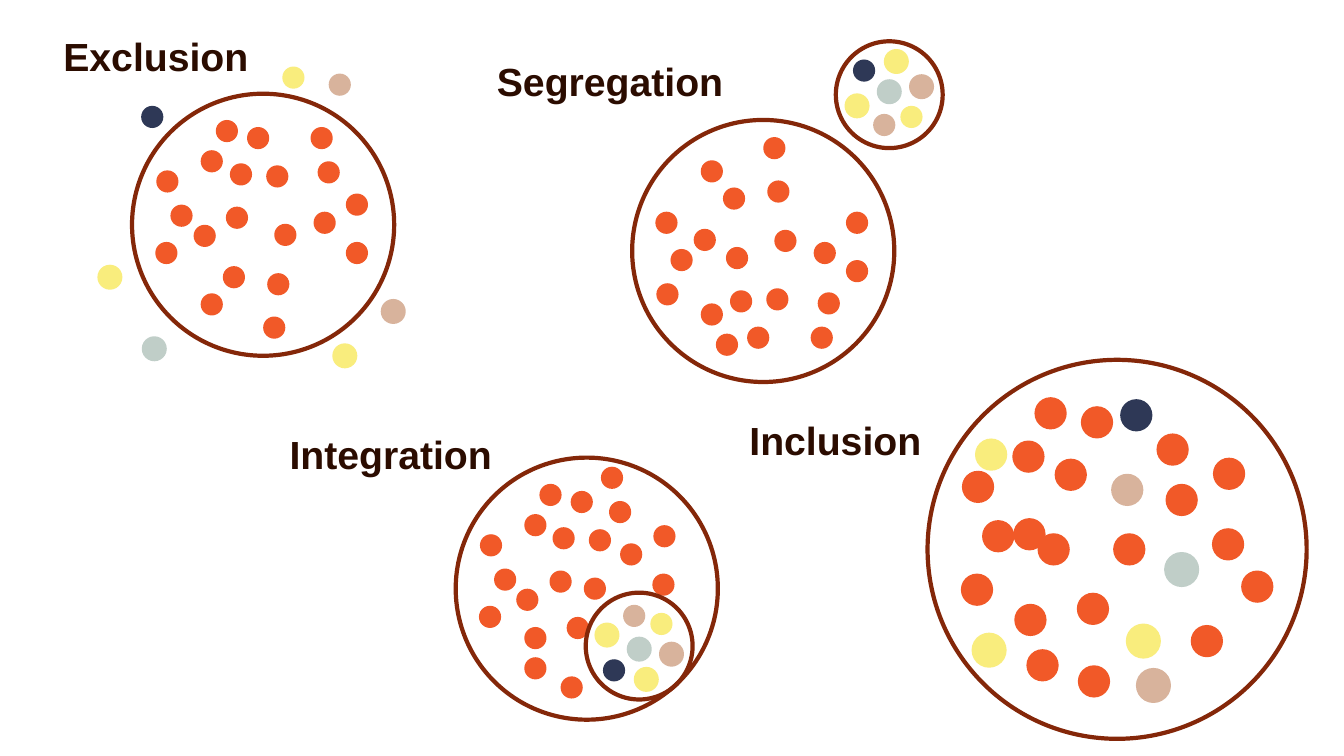
from pptx import Presentation
from pptx import util as u
from pptx.dml.color import RGBColor
from pptx.enum import shapes, text

INCH = 2.54  # coordinates below are in inches; lengths are given with Cm
COLOURS = {"ring": "842709", "majority": "F15928", "heading": "2B0C00",
           "tan": "D8B39C", "yellow": "F9ED7D", "navy": "2E3856", "mint": "C0CEC8"}
# Colour and outline width of the seven minority dots, in drawing order
MINORITY = [("tan", 0), ("yellow", 2), ("yellow", 2), ("navy", 0),
            ("mint", 2), ("tan", 2), ("yellow", 0)]
HEADING_FORMAT = {"name": "Arial", "size": u.Pt(28), "bold": True}
DOT, BIG_DOT, RING, SMALL_RING, BIG_RING = 0.22, 0.32, 2.6, 1.06, 3.76

deck = Presentation()
deck.slide_width, deck.slide_height = u.Cm(13.33 * INCH), u.Cm(7.5 * INCH)
slide = deck.slides.add_slide(deck.slide_layouts[6])


def add_circle(group, place, size, fill=None, outline=None, width=0):
    box = [u.Cm(value * INCH) for value in (*place, size, size)]
    circle = group.shapes.add_shape(shapes.MSO_SHAPE.OVAL, *box)
    circle.shadow.inherit = False
    for part, colour in ((circle.fill, fill), (circle.line.fill, outline)):
        if colour:
            part.solid()
            part.fore_color.rgb = RGBColor.from_string(COLOURS[colour])
        else:
            part.background()
    if outline:
        circle.line.width = u.Pt(width)


def mirror(places, shift, total):
    """Flip places top to bottom and move them sideways."""
    return [(x + shift, total - y) for x, y in places]


# Dot positions: segregation mirrors exclusion, and the two small rings mirror each other
exclusion_majority = [
    (3.43, 1.92), (2.64, 1.64), (3.08, 1.26), (2.61, 3.14), (2.65, 2.71),
    (2.21, 2.64), (1.99, 2.91), (2.24, 2.05), (1.92, 2.23), (1.69, 2.03),
    (1.54, 2.4), (1.55, 1.69), (2.28, 1.62), (2.45, 1.26), (2.14, 1.19),
    (1.99, 1.49), (2.72, 2.22), (3.15, 1.6), (3.11, 2.1), (3.43, 2.4)]
exclusion_minority = [
    (3.26, 0.73), (3.31, 3.42), (0.98, 2.64), (1.4, 1.05),
    (1.42, 3.35), (3.79, 2.98), (2.8, 0.66)]
integration_majority = [
    (6.48, 5.21), (5.84, 5.25), (5.96, 4.63), (5.56, 6.71), (5.62, 6.12),
    (5.2, 6.22), (5.2, 6.52), (5.45, 5.66), (5.12, 5.84), (4.9, 5.64),
    (4.75, 6.01), (4.76, 5.3), (5.48, 5.23), (5.66, 4.87), (5.35, 4.8),
    (5.2, 5.1), (5.79, 5.73), (6.04, 4.97), (6.15, 5.39), (6.47, 5.69)]
integration_minority = [
    (6.18, 6), (6.3, 6.63), (5.91, 6.19), (5.98, 6.54),
    (6.23, 6.33), (6.55, 6.38), (6.45, 6.08)]
segregation_majority = mirror(exclusion_majority, 4.96, 4.5)
segregation_minority = mirror(integration_minority, 2.48, 7.13)
inclusion_majority = [
    (12.03, 4.54), (12.31, 5.66), (11.81, 6.2), (10.69, 6.6), (10.68, 5.88),
    (10.06, 5.99), (10.18, 6.44), (10.29, 5.29), (10.05, 5.14), (9.74, 5.16),
    (9.53, 5.69), (9.54, 4.67), (10.46, 4.55), (10.72, 4.03), (10.26, 3.94),
    (10.04, 4.37), (11.04, 5.29), (11.47, 4.3), (11.56, 4.8), (12.02, 5.24)]
inclusion_minority = [
    (11.02, 4.7), (11.18, 6.2), (9.65, 6.29), (11.11, 3.96),
    (11.56, 5.49), (11.28, 6.64), (9.67, 4.35)]

# Heading, its place and alignment, ring, dot size, dots, small ring
LEFT, CENTER = text.PP_ALIGN.LEFT, text.PP_ALIGN.CENTER
models = [
    ("Exclusion", (0.53, 0.27), LEFT, (1.31, 0.93), RING, DOT,
     exclusion_majority, exclusion_minority, None),
    ("Integration", (2.6, 4.22), CENTER, (4.52, 4.54), RING, DOT,
     integration_majority, integration_minority, (5.81, 5.88)),
    ("Segregation", (4.83, 0.52), LEFT, (6.27, 1.19), RING, DOT,
     segregation_majority, segregation_minority, (8.29, 0.41)),
    ("Inclusion", (7.01, 4.08), CENTER, (9.2, 3.57), BIG_RING, BIG_DOT,
     inclusion_majority, inclusion_minority, None)]

for name, name_place, align, ring, ring_size, dot, majority, minority, small_ring in models:
    # Heading
    box = [u.Cm(value * INCH) for value in (*name_place, 2.55, 0.57)]
    frame = slide.shapes.add_textbox(*box).text_frame
    frame.word_wrap = True
    frame.auto_size = text.MSO_AUTO_SIZE.SHAPE_TO_FIT_TEXT
    heading = frame.paragraphs[0]
    heading.alignment = align
    label = heading.add_run()
    label.text = name
    for attribute, value in HEADING_FORMAT.items():
        setattr(label.font, attribute, value)
    label.font.color.rgb = RGBColor.from_string(COLOURS["heading"])

    # Ring with its dots
    diagram = slide.shapes.add_group_shape()
    add_circle(diagram, ring, ring_size, outline="ring", width=3)
    for place in majority:
        add_circle(diagram, place, dot, "majority")
    for place, (colour, width) in zip(minority, MINORITY):
        add_circle(diagram, place, dot, colour, colour if width else None, width)
    if small_ring:
        add_circle(diagram, small_ring, SMALL_RING, outline="ring", width=3)

deck.save("out.pptx")
